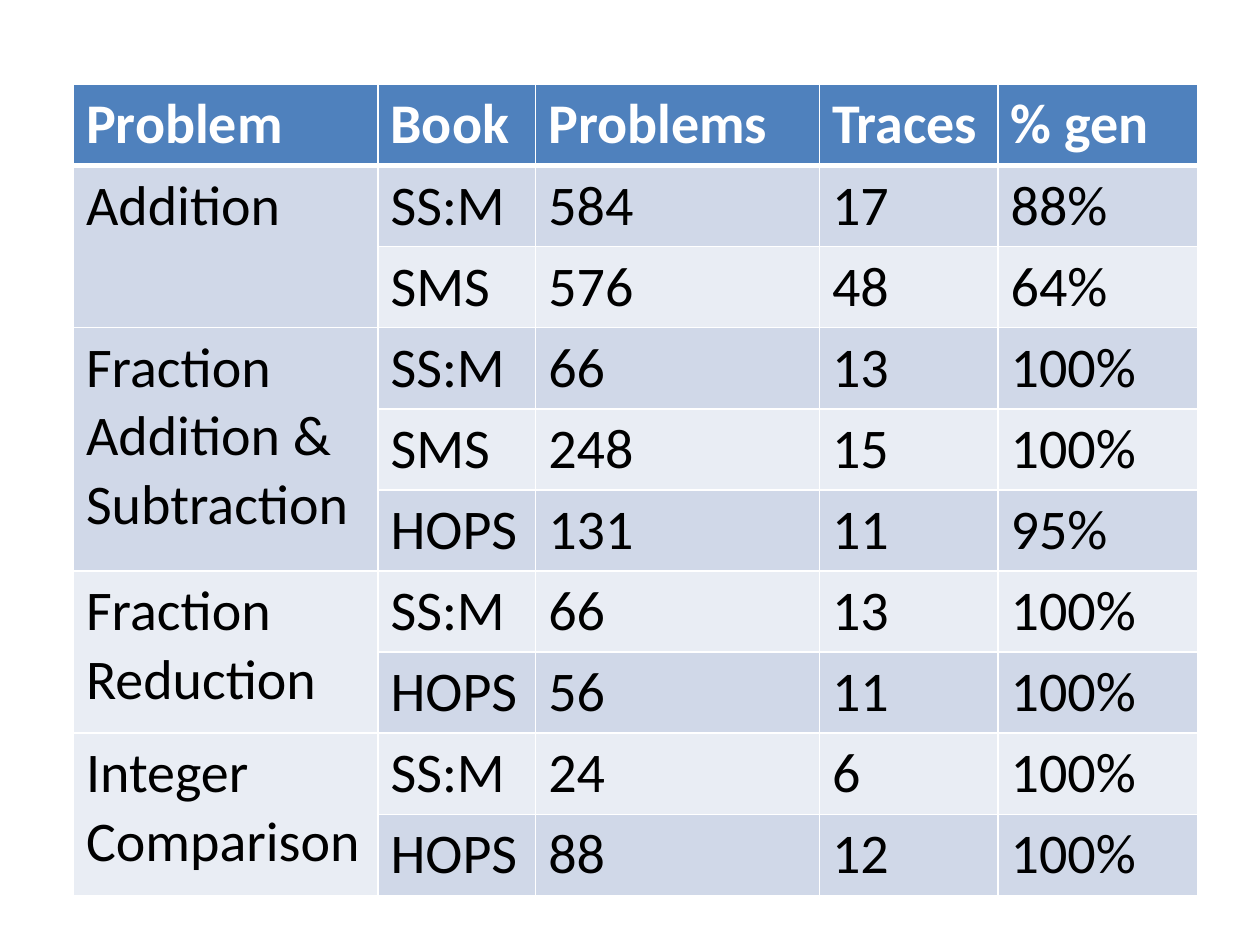
import pptx
import pptx.dml.color
import pptx.oxml
import pptx.oxml.ns
import pptx.util

Cm = pptx.util.Cm
THEME = {
    "font": "Calibri",
    "size": 32,
    "header": "4F81BD",
    "bands": ["D0D8E8", "E9EDF4"],
    "line": "FFFFFF",
    "header_text": "FFFFFF",
    "text": "000000",
}


def write_text(tf, text, color, bold=False):
    r = tf.paragraphs[0].add_run()
    r.text = text
    r.font.name = THEME["font"]
    r.font.size = pptx.util.Pt(THEME["size"])
    r.font.bold = bold
    r.font.color.rgb = pptx.dml.color.RGBColor.from_string(color)


def set_border(cell, side, width):
    cell._tc.get_or_add_tcPr().append(pptx.oxml.parse_xml(
        f'<a:ln{side} {pptx.oxml.ns.nsdecls("a")} w="{pptx.util.Pt(width)}">'
        f'<a:solidFill><a:srgbClr val="{THEME["line"]}"/></a:solidFill></a:ln{side}>'
    ))


headers = ["Problem", "Book", "Problems", "Traces", "% gen"]
groups = [
    ("Addition", [("SS:M", "584", "17", "88%"), ("SMS", "576", "48", "64%")]),
    ("Fraction Addition & Subtraction", [
        ("SS:M", "66", "13", "100%"),
        ("SMS", "248", "15", "100%"),
        ("HOPS", "131", "11", "95%"),
    ]),
    ("Fraction Reduction", [("SS:M", "66", "13", "100%"), ("HOPS", "56", "11", "100%")]),
    ("Integer Comparison", [("SS:M", "24", "6", "100%"), ("HOPS", "88", "12", "100%")]),
]
rows = [headers]
spans = []
for problem, books in groups:
    spans.append((len(rows), len(rows) + len(books) - 1))
    for i, values in enumerate(books):
        rows.append([problem if i == 0 else "", *values])

prs = pptx.Presentation()
prs.slide_width = Cm(25.4)
prs.slide_height = Cm(19.05)
s = prs.slides.add_slide(prs.slide_layouts[6])

widths = [6.14, 3.18, 5.72, 3.6, 4.02]
row_height = 1.63
table = s.shapes.add_table(
    len(rows), len(headers), Cm(1.48), Cm(1.7),
    Cm(sum(widths)), Cm(row_height * len(rows)),
).table
for column, width in zip(table.columns, widths):
    column.width = Cm(width)
for row in table.rows:
    row.height = Cm(row_height)

for i, values in enumerate(rows):
    is_header = i == 0
    fill = THEME["header"] if is_header else THEME["bands"][(i - 1) % 2]
    color = THEME["header_text"] if is_header else THEME["text"]
    for j, text in enumerate(values):
        cell = table.cell(i, j)
        for side in "LRTB":
            under_header = (i, side) in [(0, "B"), (1, "T")]
            set_border(cell, side, 3 if under_header else 1)
        cell.fill.solid()
        cell.fill.fore_color.rgb = pptx.dml.color.RGBColor.from_string(fill)
        if text:
            write_text(cell.text_frame, text, color, bold=is_header)

for first, last in spans:
    table.cell(first, 0).merge(table.cell(last, 0))

prs.save("out.pptx")
